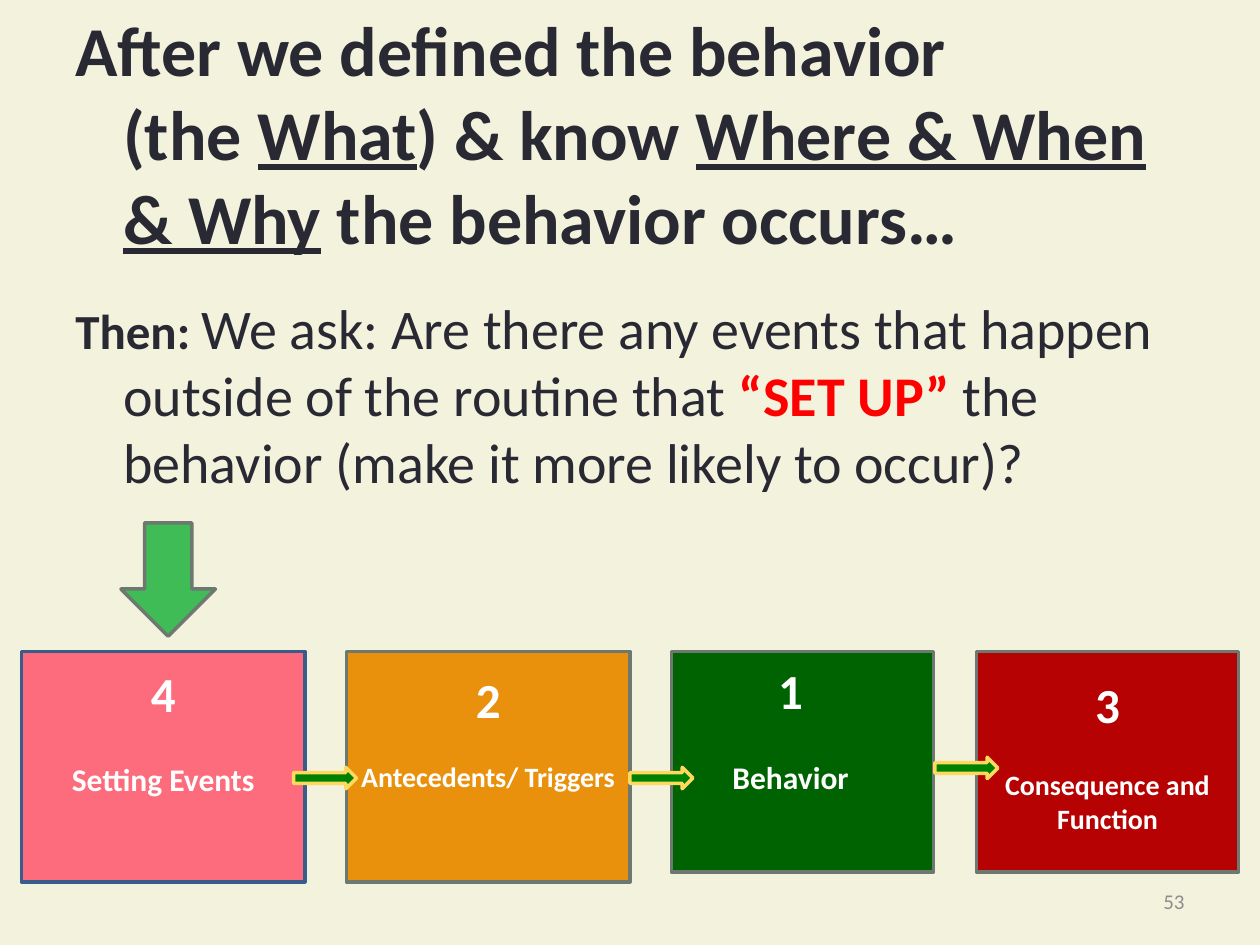
from pptx import Presentation
from pptx.dml.color import RGBColor
from pptx.enum.shapes import MSO_SHAPE
from pptx.enum.text import MSO_ANCHOR, PP_ALIGN
from pptx.util import Inches, Pt

RECTANGLE = MSO_SHAPE.RECTANGLE
RIGHT_ARROW = MSO_SHAPE.RIGHT_ARROW
DOWN_ARROW = MSO_SHAPE.DOWN_ARROW
TOP, MIDDLE = MSO_ANCHOR.TOP, MSO_ANCHOR.MIDDLE
CENTER, RIGHT = PP_ALIGN.CENTER, PP_ALIGN.RIGHT

FONT = "Calibri"
COLORS = {
    "background": "F3F2DC", "text": "292934", "accent": "FF0000",
    "white": "FFFFFF", "number": "8D8D8F", "gray": "6D7871",
    "blue": "385D8A", "pink": "FC6C7D", "orange": "E9910C",
    "green": "006301", "red": "B60202", "arrow": "008000",
    "yellow": "FFD95E", "pointer": "40BC56",
}


def add_filled_shape(kind, left, top, width, height, fill, line):
    shape = page.shapes.add_shape(
        kind, Inches(left), Inches(top), Inches(width), Inches(height))
    shape.shadow.inherit = False
    shape.fill.solid()
    shape.fill.fore_color.rgb = RGBColor.from_string(COLORS[fill])
    shape.line.color.rgb = RGBColor.from_string(COLORS[line])
    shape.line.width = Pt(2)
    return shape


def style_span(span, size, color, bold=False, underline=False):
    span.font.name = FONT
    span.font.size = Pt(size)
    span.font.bold = bold
    span.font.underline = underline
    span.font.color.rgb = RGBColor.from_string(COLORS[color])


deck = Presentation()
deck.slide_width, deck.slide_height = Inches(10), Inches(7.5)
page = deck.slides.add_slide(deck.slide_layouts[6])
page.background.fill.solid()
page.background.fill.fore_color.rgb = RGBColor.from_string(COLORS["background"])

# Question: each span is text, size, colour, bold, underline
lead = [
    ("After we defined the behavior", 40, "text", True, False),
    ("(the ", 40, "text", True, False),
    ("What", 40, "text", True, True),
    (") & know ", 40, "text", True, False),
    ("Where & When & Why", 40, "text", True, True),
    (" the behavior occurs…", 40, "text", True, False),
]
question = [
    ("Then: ", 28, "text", True, False),
    ("We ask: Are there any events that happen outside of the routine that ",
     32, "text", False, False),
    ("“SET UP”", 32, "accent", True, False),
    (" the behavior (make it more likely to occur)?", 32, "text", False, False),
]
box = page.shapes.add_textbox(Inches(0.5), Inches(0), Inches(9), Inches(4.1))
frame = box.text_frame
frame.word_wrap = True
for para, spans in ((frame.paragraphs[0], lead), (frame.add_paragraph(), question)):
    properties = para._p.get_or_add_pPr()
    properties.set("marL", str(Inches(0.38)))
    properties.set("indent", str(-Inches(0.38)))
    for position, (text, *style) in enumerate(spans):
        if spans is lead and position == 1:
            para.add_line_break()
        span = para.add_run()
        span.text = text
        style_span(span, *style)
frame.paragraphs[1].space_before = Pt(20)

# Steps: number, label, label size, left, width, height, fill, line, inset, gap
steps = [
    ("4", "Setting Events", 18, 0.17, 2.25, 1.83, "pink", "blue", 0.1, 21),
    ("2", "Antecedents/ Triggers", 16, 2.75, 2.25, 1.83, "orange", "gray", 0.14, 18),
    ("1", "Behavior", 18, 5.33, 2.08, 1.75, "green", "gray", 0.07, 22),
    ("3", "Consequence and Function", 16, 7.75, 2.08, 1.75, "red", "gray", 0.18, 20),
]
for number, label, size, left, width, height, fill, line, inset, gap in steps:
    step = add_filled_shape(RECTANGLE, left, 5.17, width, height, fill, line)
    frame = step.text_frame
    frame.word_wrap = True
    frame.vertical_anchor = TOP
    frame.margin_top = Inches(inset)
    frame.text = f"{number}\n{label}"
    for para, para_size in zip(frame.paragraphs, (28, size)):
        para.alignment = CENTER
        style_span(para.runs[0], para_size, "white", bold=True)
    frame.paragraphs[1].space_before = Pt(gap)
    if number == "1":  # this number sits left of the box centre
        frame.paragraphs[0]._p.get_or_add_pPr().set("marR", str(Inches(0.19)))

for left, top in ((2.33, 6.09), (5, 6.09), (7.42, 6.01)):
    add_filled_shape(RIGHT_ARROW, left, top, 0.5, 0.17, "arrow", "yellow")
add_filled_shape(DOWN_ARROW, 0.96, 4.15, 0.75, 0.9, "pointer", "gray")

page_number = page.shapes.add_textbox(
    Inches(7.17), Inches(6.95), Inches(2.33), Inches(0.4))
frame = page_number.text_frame
frame.word_wrap = True
frame.vertical_anchor = MIDDLE
frame.text = "53"
frame.paragraphs[0].alignment = RIGHT
style_span(frame.paragraphs[0].runs[0], 12, "number")

deck.save("out.pptx")
